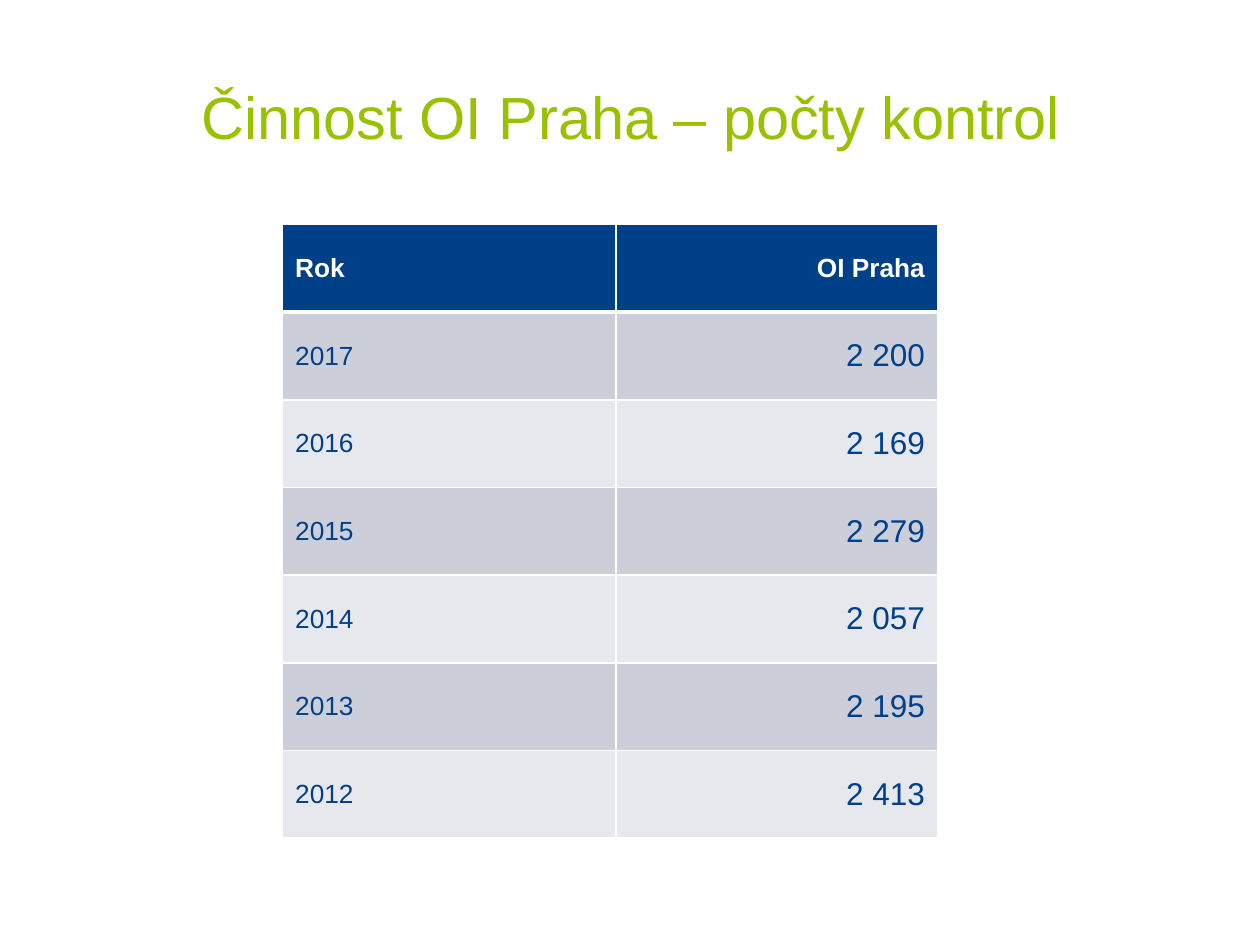
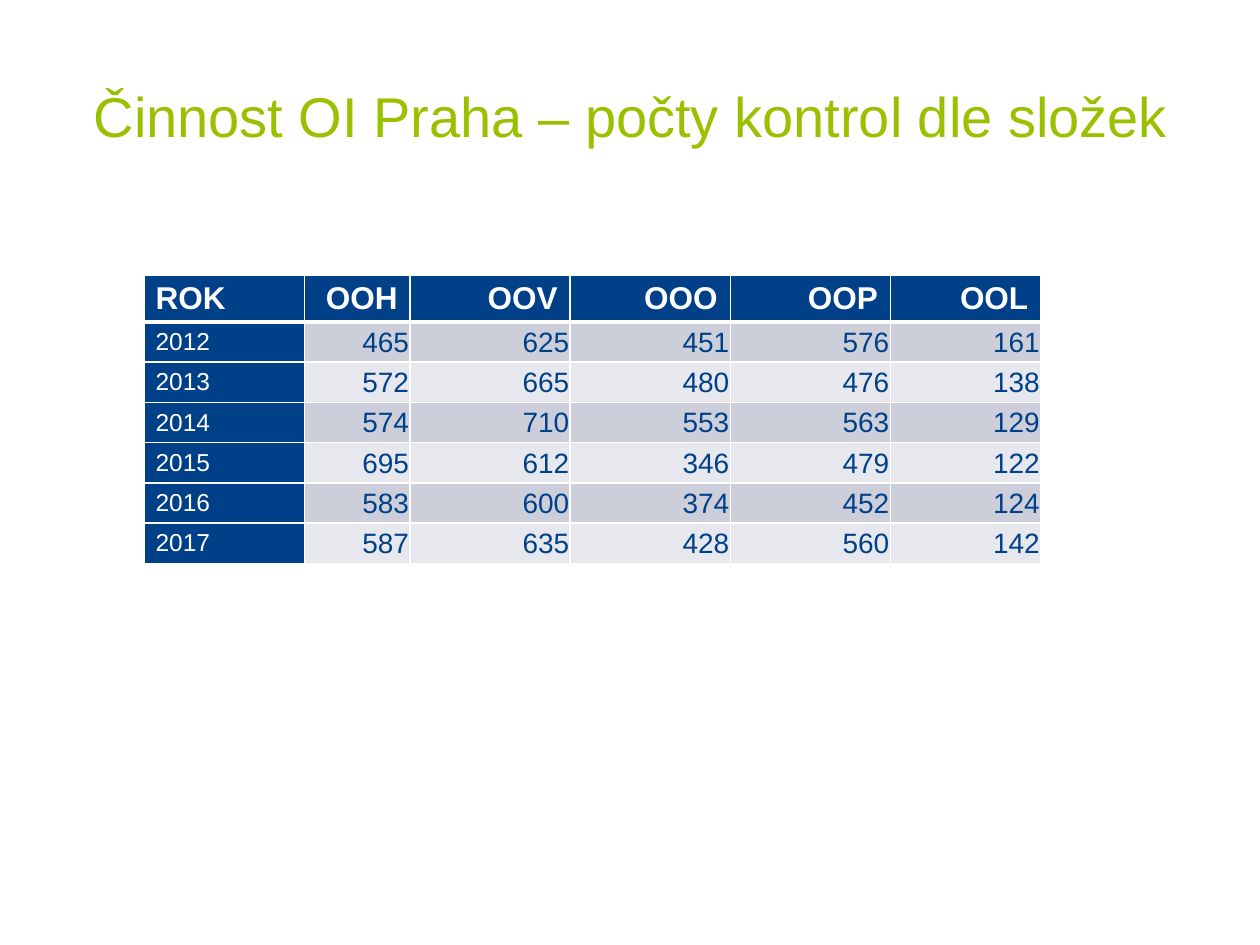
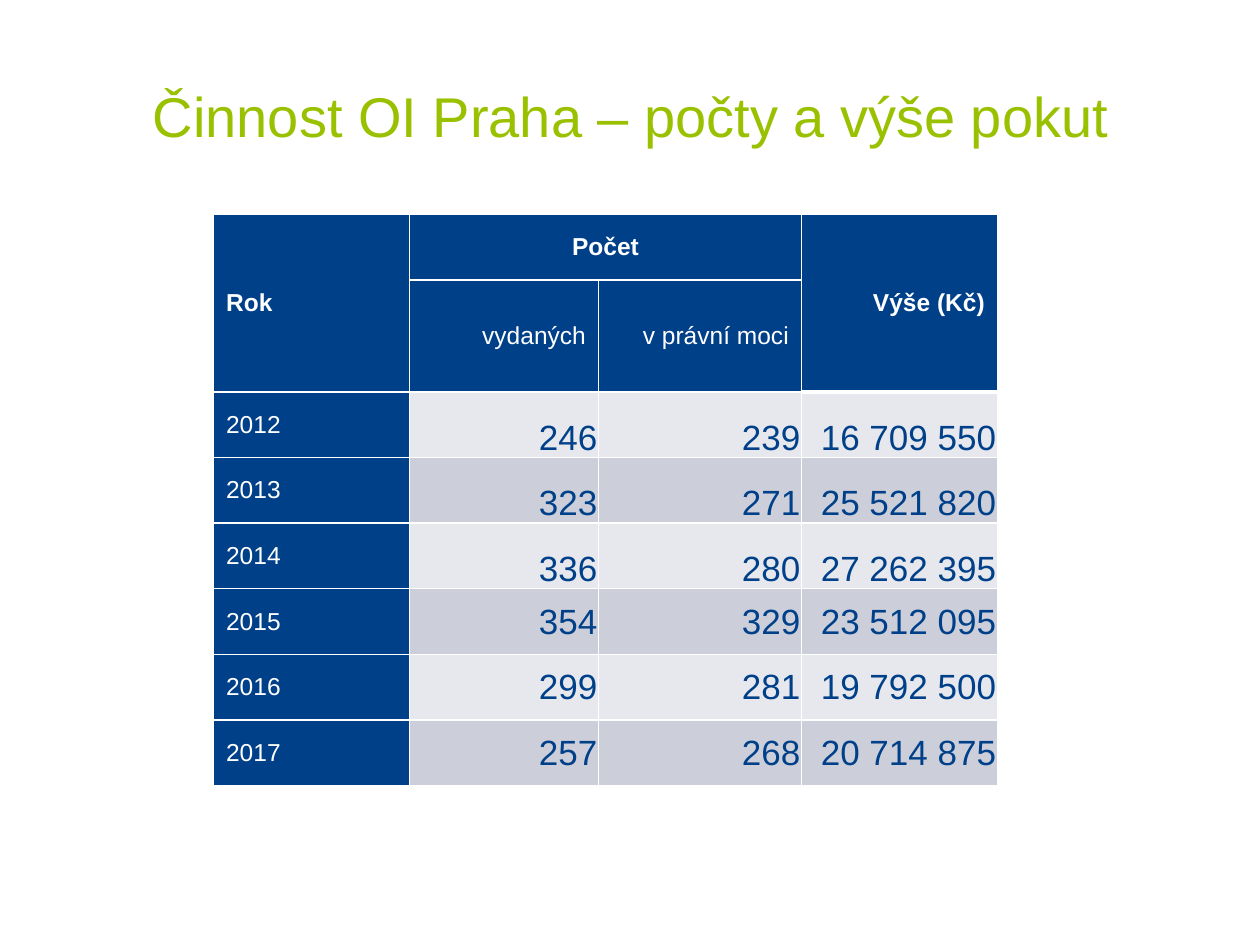
from dataclasses import dataclass

from lxml import etree
from pptx import Presentation
from pptx.dml.color import RGBColor
from pptx.enum.text import MSO_ANCHOR, PP_ALIGN
from pptx.oxml.ns import qn
from pptx.util import Pt

LEFT, CENTER, RIGHT = PP_ALIGN.LEFT, PP_ALIGN.CENTER, PP_ALIGN.RIGHT
MIDDLE, BOTTOM = MSO_ANCHOR.MIDDLE, MSO_ANCHOR.BOTTOM


@dataclass(frozen=True)
class Theme:
    font: str = "Arial"
    green: str = "99C100"
    navy: str = "004089"
    white: str = "FFFFFF"
    dark_band: str = "CCCFDA"
    light_band: str = "E7E8ED"
    title_size: int = 32
    large_title_size: int = 34
    thin_line: int = 1
    thick_line: int = 3
    cell_margins: tuple = (7.2, 3.6, 7.2, 3.6)
    compact_margins: tuple = (6.5, 3.3, 7.2, 3.3)
    tight_margins: tuple = (0.7, 0.7, 0.7, 0)


THEME = Theme()


def write_text(text_frame, text, *, size, color, bold=False, align=LEFT):
    paragraph = text_frame.paragraphs[0]
    paragraph.alignment = align
    run = paragraph.add_run()
    run.text = text
    font = run.font
    font.name = THEME.font
    font.size = Pt(size)
    font.bold = bold
    font.color.rgb = RGBColor.from_string(color)


def add_titled_slide(presentation, text, size=THEME.title_size):
    slide = presentation.slides.add_slide(presentation.slide_layouts[5])
    title = slide.shapes.title
    title.left, title.top, title.width, title.height = Pt(36.7), Pt(20.9), Pt(648), Pt(90)
    title.text_frame.word_wrap = True
    title.text_frame.vertical_anchor = MIDDLE
    write_text(title.text_frame, text, size=size, color=THEME.green, align=CENTER)
    return slide


def set_borders(cell, top, bottom):
    properties = cell._tc.get_or_add_tcPr()
    sides = {"lnL": THEME.thin_line, "lnR": THEME.thin_line, "lnT": top, "lnB": bottom}
    for position, (side, width) in enumerate(sides.items()):
        line = etree.Element(qn(f"a:{side}"), w=str(Pt(width)))
        fill = etree.SubElement(line, qn("a:solidFill"))
        etree.SubElement(fill, qn("a:srgbClr"), val=THEME.white)
        properties.insert(position, line)


def format_cell(cell, fill, margins, anchor):
    cell.fill.solid()
    cell.fill.fore_color.rgb = RGBColor.from_string(fill)
    cell.margin_left, cell.margin_top, cell.margin_right, cell.margin_bottom = map(Pt, margins)
    cell.vertical_anchor = anchor


def add_data_table(slide, rows, *, left, top, widths, heights, header_size, label_size,
                   value_size, header_rows=1, navy_labels=True, margins=THEME.cell_margins,
                   value_margins=THEME.tight_margins, thick_columns=None, merges=(),
                   centered=(), bottom_rows=()):
    frame = slide.shapes.add_table(len(rows), len(widths), Pt(left), Pt(top),
                                   Pt(sum(widths)), Pt(sum(heights)))
    table = frame.table
    table.horz_banding = False
    for column, width in zip(table.columns, widths):
        column.width = Pt(width)
    for row, height in zip(table.rows, heights):
        row.height = Pt(height)
    for first, last in merges:
        table.cell(*first).merge(table.cell(*last))
    if thick_columns is None:
        thick_columns = range(len(widths))

    for row_index, values in enumerate(rows):
        for column_index, text in enumerate(values):
            cell = table.cell(row_index, column_index)
            is_header = row_index < header_rows
            is_label = column_index == 0
            is_navy = is_header or (is_label and navy_labels)
            band = THEME.dark_band if row_index % 2 else THEME.light_band
            is_value = not is_header and not is_label
            anchor = BOTTOM if is_value and row_index in bottom_rows else MIDDLE
            format_cell(cell, THEME.navy if is_navy else band,
                        value_margins if is_value else margins, anchor)
            thick = THEME.thick_line if column_index in thick_columns else THEME.thin_line
            set_borders(cell,
                        thick if row_index == header_rows else THEME.thin_line,
                        thick if row_index == header_rows - 1 or
                        (cell.is_merge_origin and cell.span_height == header_rows)
                        else THEME.thin_line)
            if text:
                align = LEFT if is_label else RIGHT
                if (row_index, column_index) in centered:
                    align = CENTER
                size = header_size if is_header else label_size if is_label else value_size
                write_text(cell.text_frame, text, size=size, bold=row_index == 0, align=align,
                           color=THEME.white if is_navy else THEME.navy)


def add_inspections_slide(presentation):
    slide = add_titled_slide(presentation, "Činnost OI Praha – počty kontrol",
                             THEME.large_title_size)
    rows = [
        ("Rok", "OI Praha"),
        ("2017", "2 200"),
        ("2016", "2 169"),
        ("2015", "2 279"),
        ("2014", "2 057"),
        ("2013", "2 195"),
        ("2012", "2 413"),
    ]
    add_data_table(slide, rows, left=161.5, top=128.3, widths=[190.5, 183.7],
                   heights=[50.1] * len(rows), header_size=15, label_size=15, value_size=18,
                   navy_labels=False, value_margins=THEME.cell_margins)


def add_departments_slide(presentation):
    slide = add_titled_slide(presentation, "Činnost OI Praha – počty kontrol dle složek")
    rows = [
        ("ROK", "OOH", "OOV", "OOO", "OOP", "OOL"),
        ("2012", "465", "625", "451", "576", "161"),
        ("2013", "572", "665", "480", "476", "138"),
        ("2014", "574", "710", "553", "563", "129"),
        ("2015", "695", "612", "346", "479", "122"),
        ("2016", "583", "600", "374", "452", "124"),
        ("2017", "587", "635", "428", "560", "142"),
    ]
    add_data_table(slide, rows, left=82.4, top=157, widths=[91.5, 60.5, 91.5, 91.5, 91.5, 86],
                   heights=[27] + [23] * (len(rows) - 1), header_size=18, label_size=14,
                   value_size=16, margins=THEME.compact_margins)


def add_fines_slide(presentation):
    slide = add_titled_slide(presentation, "Činnost OI Praha – počty a výše pokut")
    rows = [
        ("Rok", "Počet", "", "Výše (Kč)"),
        ("", "vydaných", "v právní moci", ""),
        ("2012", "246", "239", "16 709 550"),
        ("2013", "323", "271", "25 521 820"),
        ("2014", "336", "280", "27 262 395"),
        ("2015", "354", "329", "23 512 095"),
        ("2016", "299", "281", "19 792 500"),
        ("2017", "257", "268", "20 714 875"),
    ]
    add_data_table(slide, rows, left=122, top=122.6, widths=[112, 108, 116, 112],
                   heights=[37.5, 63.9] + [37.5] * (len(rows) - 2), header_size=14,
                   label_size=14, value_size=20, header_rows=2, thick_columns=[3],
                   merges=[((0, 0), (1, 0)), ((0, 1), (0, 2)), ((0, 3), (1, 3))],
                   centered=[(0, 1)], bottom_rows=[2, 3, 4])


def main():
    presentation = Presentation()
    presentation.slide_width, presentation.slide_height = Pt(720), Pt(540)
    add_inspections_slide(presentation)
    add_departments_slide(presentation)
    add_fines_slide(presentation)
    presentation.save("out.pptx")


if __name__ == "__main__":
    main()
